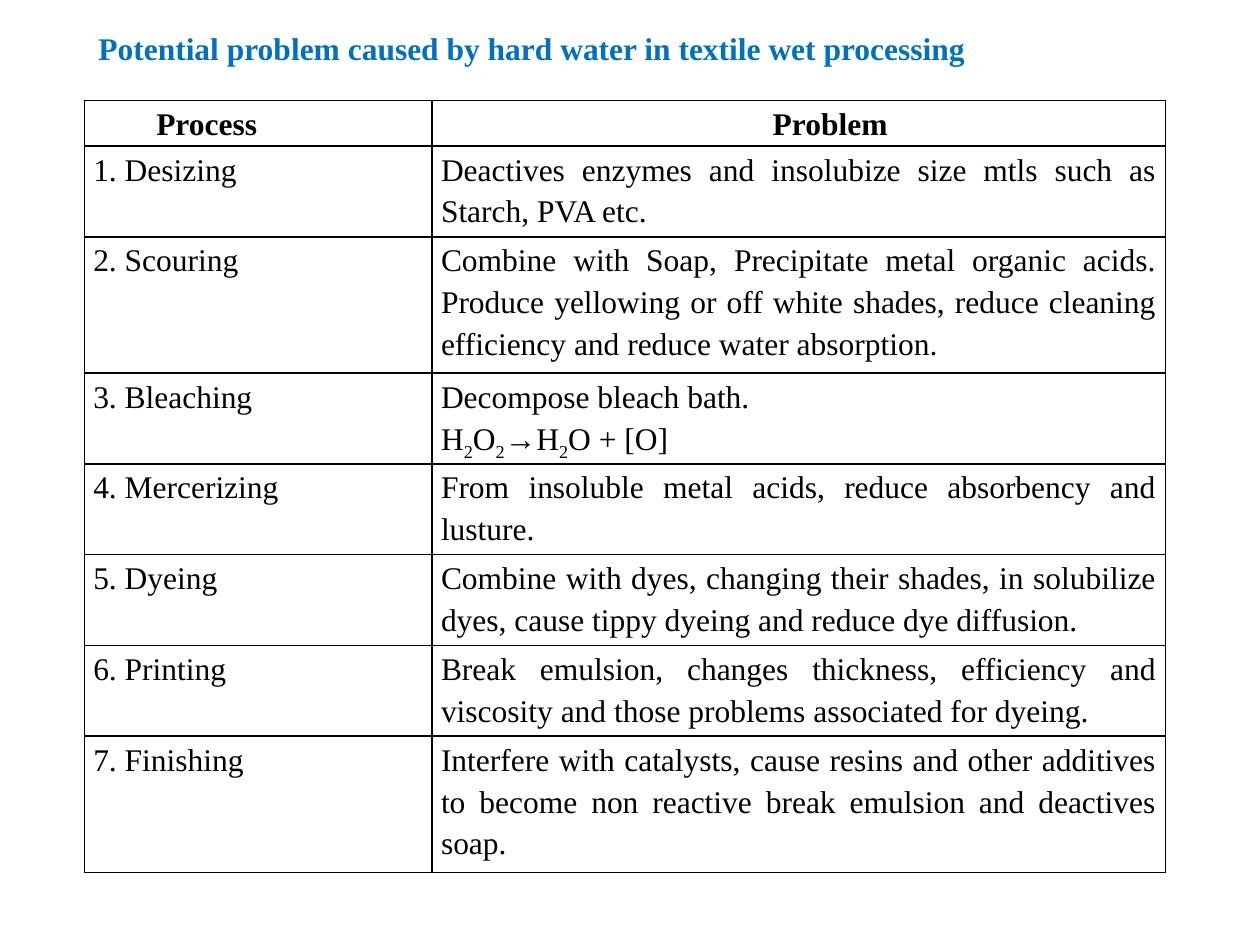
from dataclasses import dataclass

from lxml.etree import SubElement
from pptx import Presentation
from pptx.dml.color import RGBColor
from pptx.enum.text import MSO_ANCHOR, MSO_AUTO_SIZE, PP_ALIGN as Align
from pptx.oxml.ns import qn
from pptx.util import Cm, Pt

FONT = "Times New Roman"
BLUE = RGBColor(0x00, 0x70, 0xC0)
BLACK = RGBColor(0x00, 0x00, 0x00)
LINE_HEIGHT = 0.915
HEADER_INDENT = Cm(1.27)
HANGING = Cm(0.97)


@dataclass(frozen=True)
class Run:
    text: str
    subscript: bool = False


@dataclass(frozen=True)
class Step:
    process: str
    problem: tuple[tuple[Run, ...], ...]
    lines: int = 2


def plain(text: str) -> tuple[Run, ...]:
    return (Run(text),)


PEROXIDE_DECAY = (
    Run("H"), Run("2", True), Run("O"), Run("2", True),
    Run("→H"), Run("2", True), Run("O + [O]"),
)
STEPS = [
    Step("Desizing", (plain(
        "Deactives enzymes and insolubize size mtls such as Starch, PVA etc."),)),
    Step("Scouring", (plain(
        "Combine with Soap, Precipitate metal organic acids. Produce yellowing or off "
        "white shades, reduce cleaning efficiency and reduce water absorption."),), 3),
    Step("Bleaching", (plain("Decompose bleach bath."), PEROXIDE_DECAY)),
    Step("Mercerizing", (plain(
        "From insoluble metal acids, reduce absorbency and lusture."),)),
    Step("Dyeing", (plain(
        "Combine with dyes, changing their shades, in solubilize dyes, cause tippy "
        "dyeing and reduce dye diffusion."),)),
    Step("Printing", (plain(
        "Break emulsion, changes thickness, efficiency and viscosity and those "
        "problems associated for dyeing."),)),
    Step("Finishing", (plain(
        "Interfere with catalysts, cause resins and other additives to become non "
        "reactive break emulsion and deactives soap."),), 3),
]


def add_run(paragraph, run: Run, color: RGBColor = BLACK, bold: bool = False) -> None:
    piece = paragraph.add_run()
    piece.text = run.text
    font = piece.font
    font.name, font.size, font.bold = FONT, Pt(18), bold
    font.color.rgb = color
    if run.subscript:
        piece._r.get_or_add_rPr().set("baseline", "-25000")


def draw_borders(cell) -> None:
    properties = cell._tc.get_or_add_tcPr()
    for side in ("a:lnL", "a:lnR", "a:lnT", "a:lnB"):
        line = SubElement(properties, qn(side), w=str(Pt(1)))
        fill = SubElement(line, qn("a:solidFill"))
        SubElement(fill, qn("a:srgbClr"), val=str(BLACK))


def fill_cell(cell, paragraphs: tuple[tuple[Run, ...], ...], align: Align,
              left: int = 0, first_line: int = 0, bold: bool = False) -> None:
    draw_borders(cell)
    cell.fill.background()
    cell.margin_left = cell.margin_right = Cm(0.18)
    cell.margin_top = cell.margin_bottom = 0
    frame = cell.text_frame
    for index, runs in enumerate(paragraphs):
        paragraph = frame.add_paragraph() if index else frame.paragraphs[0]
        paragraph.alignment = align
        paragraph.line_spacing = 1.2
        properties = paragraph._p.get_or_add_pPr()
        properties.set("marL", str(left))
        properties.set("indent", str(first_line))
        for run in runs:
            add_run(paragraph, run, bold=bold)


def add_heading(slide) -> None:
    heading = slide.shapes.title
    heading.left, heading.top = Cm(1.73), Cm(0.46)
    heading.width, heading.height = Cm(18.39), Cm(1.02)
    frame = heading.text_frame
    frame.word_wrap = True
    frame.auto_size = MSO_AUTO_SIZE.NONE
    frame.vertical_anchor = MSO_ANCHOR.MIDDLE
    paragraph = frame.paragraphs[0]
    paragraph.alignment = Align.LEFT
    add_run(paragraph, Run(
        "Potential problem caused by hard water in textile wet processing"), BLUE, True)


def add_problem_table(slide) -> None:
    row_lines = [1] + [step.lines for step in STEPS]
    widths = (Cm(7.01), Cm(14.78))
    table = slide.shapes.add_table(
        len(row_lines), len(widths), Cm(1.7), Cm(2.03),
        sum(widths), Cm(LINE_HEIGHT * sum(row_lines))).table
    table.first_row = table.horz_banding = False
    for column, width in zip(table.columns, widths):
        column.width = width
    for row, lines in zip(table.rows, row_lines):
        row.height = Cm(LINE_HEIGHT * lines)

    for column, (label, align) in enumerate(
            (("Process", Align.LEFT), ("Problem", Align.CENTER))):
        fill_cell(table.cell(0, column), (plain(label),), align,
                  first_line=HEADER_INDENT, bold=True)
    for number, step in enumerate(STEPS, start=1):
        fill_cell(table.cell(number, 0), (plain(f"{number}. {step.process}"),),
                  Align.JUSTIFY, left=HANGING, first_line=-HANGING)
        fill_cell(table.cell(number, 1), step.problem, Align.JUSTIFY)


def main() -> None:
    deck = Presentation()
    deck.slide_width, deck.slide_height = Cm(25.4), Cm(19.05)
    slide = deck.slides.add_slide(deck.slide_layouts.get_by_name("Title Only"))
    add_heading(slide)
    add_problem_table(slide)
    deck.save("out.pptx")


if __name__ == "__main__":
    main()
